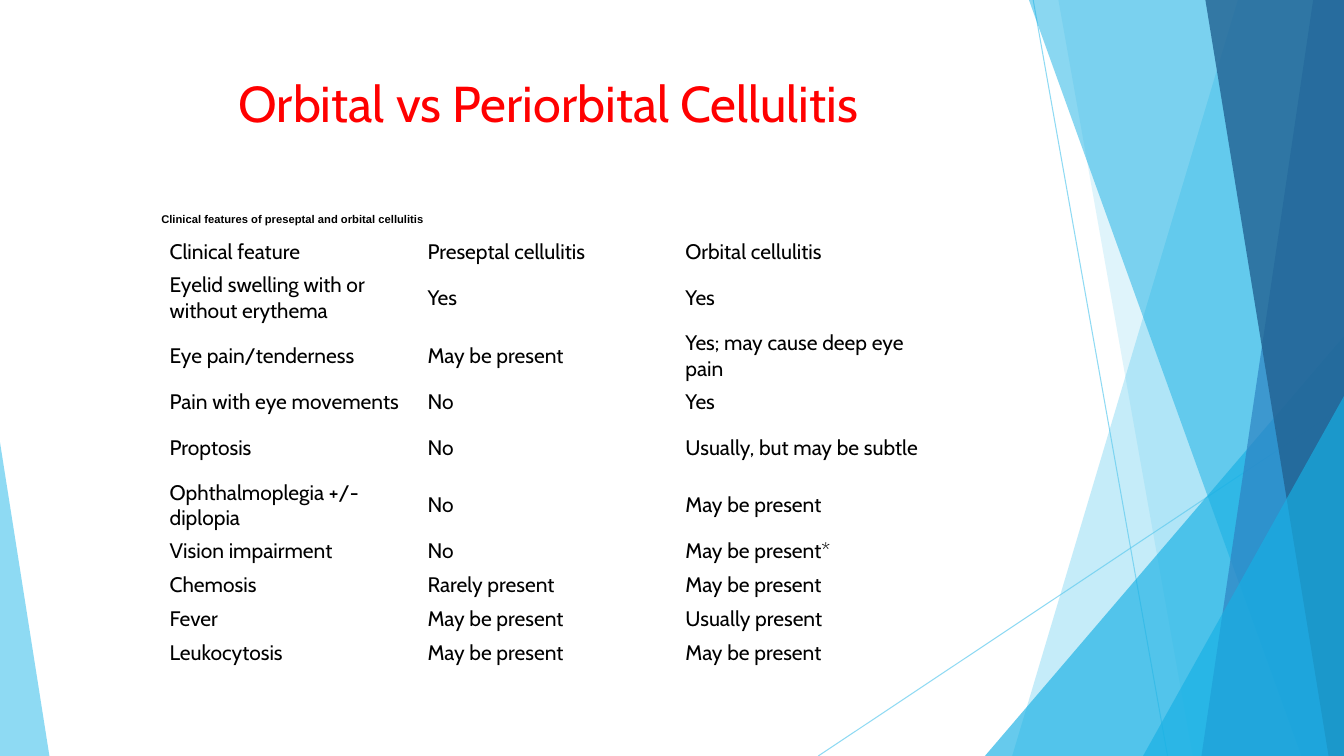
from lxml.etree import SubElement
from pptx import Presentation
from pptx.dml.color import RGBColor
from pptx.enum.shapes import MSO_CONNECTOR, MSO_SHAPE
from pptx.enum.text import MSO_ANCHOR, PP_ALIGN
from pptx.oxml.ns import qn
from pptx.util import Pt

WIDTH, HEIGHT = 960, 540
COLORS = {
    "sky": "5FCBEF", "cyan": "17B0E4", "blue": "2E83C3", "navy": "226292",
    "title": "FF0000", "text": "000000",
}
FEATURES = [
    ("Clinical feature", "Preseptal cellulitis", "Orbital cellulitis"),
    ("Eyelid swelling with or without erythema", "Yes", "Yes"),
    ("Eye pain/tenderness", "May be present", "Yes; may cause deep eye pain"),
    ("Pain with eye movements", "No", "Yes"),
    ("Proptosis", "No", "Usually, but may be subtle"),
    ("Ophthalmoplegia +/- diplopia", "No", "May be present"),
    ("Vision impairment", "No", "May be present*"),
    ("Chemosis", "Rarely present", "May be present"),
    ("Fever", "May be present", "Usually present"),
    ("Leukocytosis", "May be present", "May be present"),
]
TALL_ROWS = {1, 2, 4, 5}


def paint(fill, color, alpha):
    """Solid colour with an opacity in percent."""
    fill.solid()
    fill.fore_color.rgb = RGBColor.from_string(COLORS[color])
    tint = fill._xPr.find(qn("a:solidFill"))[0]
    SubElement(tint, qn("a:alpha")).set("val", str(alpha * 1000))


def style_text(paragraph, font_name, size, color, bold=False):
    font = paragraph.font
    font.name, font.size, font.bold = font_name, Pt(size), bold
    font.color.rgb = RGBColor.from_string(COLORS[color])


def finish_facet(facet, color, alpha):
    paint(facet.fill, color, alpha)
    facet.line.fill.background()
    facet.shadow.inherit = False


def add_ray(slide, start, end):
    ray = slide.shapes.add_connector(
        MSO_CONNECTOR.STRAIGHT, *(Pt(v) for v in (*start, *end)))
    ray.line.width = Pt(0.75)
    paint(ray.line.fill, "sky", 70)
    SubElement(ray._element.spPr, qn("a:effectLst"))


def add_band(slide, right, top, bottom, top_inset, bottom_inset, color, alpha):
    """Full-height band whose slanted left side is inset from the right edge."""
    builder = slide.shapes.build_freeform(Pt(right - top_inset), Pt(top))
    builder.add_line_segments([
        (Pt(right), Pt(top)), (Pt(right), Pt(bottom)),
        (Pt(right - bottom_inset), Pt(bottom))], close=True)
    finish_facet(builder.convert_to_shape(), color, alpha)


def add_corner(slide, left, bottom, width, height, apex, color, alpha):
    corner = slide.shapes.add_shape(
        MSO_SHAPE.ISOSCELES_TRIANGLE, Pt(left), Pt(bottom - height), Pt(width), Pt(height))
    corner.adjustments[0] = apex
    finish_facet(corner, color, alpha)


def add_facets(slide, left, top, width, height):
    right, bottom = left + width, top + height
    # Thin rays
    add_ray(slide, (right - 222, top), (right - 126, bottom))
    add_ray(slide, (right, top + 290), (right - 375.5, bottom))
    # Overlapping bands and corners, back to front
    add_band(slide, right, top, bottom, 75.8, 237, "sky", 36)
    add_band(slide, right, top, bottom, 204, 108, "sky", 20)
    add_corner(slide, right - 256.5, bottom, 256.5, 300, 1, "cyan", 66)
    add_band(slide, right, top, bottom, 225, 30.5, "cyan", 50)
    add_band(slide, right, top, bottom, 22, 101.8, "blue", 70)
    add_band(slide, right, top, bottom, 99, 11, "navy", 80)
    add_corner(slide, right - 143.5, bottom, 143.5, 257, 1, "cyan", 66)
    # Left corner
    add_corner(slide, left, bottom, 35.3, 224, 0, "sky", 70)


def add_title(slide, left, top, width, height):
    title = slide.shapes.add_textbox(Pt(left), Pt(top), Pt(width), Pt(height)).text_frame
    title.word_wrap = True
    title.vertical_anchor = MSO_ANCHOR.TOP
    heading = title.paragraphs[0]
    heading.text = "Orbital vs Periorbital Cellulitis"
    heading.alignment = PP_ALIGN.CENTER
    style_text(heading, "Cabin", 36, "title")


def add_caption(slide, left, top, width, height):
    caption = slide.shapes.add_textbox(Pt(left), Pt(top), Pt(width), Pt(height)).text_frame
    caption.word_wrap = True
    caption.vertical_anchor = MSO_ANCHOR.MIDDLE
    caption.margin_left = caption.margin_right = 0
    caption.margin_top = caption.margin_bottom = 0
    caption.paragraphs[0].text = "Clinical features of preseptal and orbital cellulitis"
    style_text(caption.paragraphs[0], "Arial", 8, "text", bold=True)


def add_feature_table(slide, left, top, width, height):
    columns = len(FEATURES[0])
    features = slide.shapes.add_table(
        len(FEATURES), columns, Pt(left), Pt(top), Pt(width), Pt(height)).table
    features.first_row = features.horz_banding = False
    for column in features.columns:
        column.width = Pt(width / columns)
    # Two-line rows are 1.7 times as high as the others
    unit = height / (len(FEATURES) + 0.7 * len(TALL_ROWS))
    for index, entries in enumerate(FEATURES):
        features.rows[index].height = Pt(unit * (1.7 if index in TALL_ROWS else 1))
        for column, entry in enumerate(entries):
            cell = features.cell(index, column)
            cell.fill.background()
            cell.vertical_anchor = MSO_ANCHOR.MIDDLE
            cell.margin_left = cell.margin_right = Pt(6)
            cell.margin_top = cell.margin_bottom = Pt(2.5)
            cell.text = entry
            style_text(cell.text_frame.paragraphs[0], "Cabin", 15, "text")


def main():
    deck = Presentation()
    deck.slide_width, deck.slide_height = Pt(WIDTH), Pt(HEIGHT)
    slide = deck.slides.add_slide(deck.slide_layouts[6])
    add_facets(slide, 0, 0, WIDTH, HEIGHT)
    add_title(slide, 53.3, 48.2, 676.8, 61.2)
    add_feature_table(slide, 115.2, 167.8, 552.6, 311)
    add_caption(slide, 115.2, 151, 552.6, 11)
    deck.save("out.pptx")


if __name__ == "__main__":
    main()
